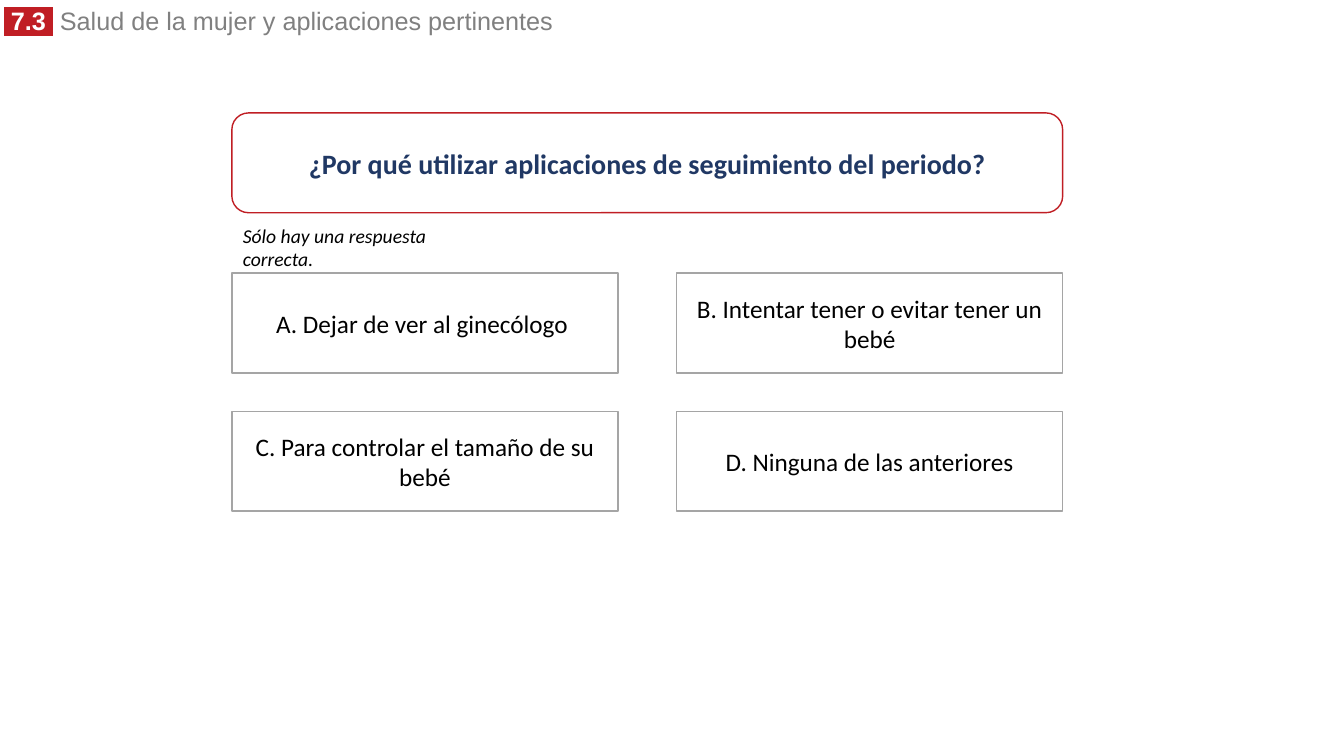
from lxml.etree import SubElement
from pptx import Presentation
from pptx.dml.color import RGBColor
from pptx.enum.shapes import MSO_SHAPE
from pptx.enum.text import MSO_ANCHOR, MSO_AUTO_SIZE, PP_ALIGN
from pptx.oxml.ns import qn
from pptx.util import Inches, Pt

# Content
SECTION_NUMBER = " 7.3 "
SECTION_TITLE = " Salud de la mujer y aplicaciones pertinentes"
QUESTION = "¿Por qué utilizar aplicaciones de seguimiento del periodo?"
HINT = "Sólo hay una respuesta correcta."
ANSWERS = [
    "A. Dejar de ver al ginecólogo ",
    "B. Intentar tener o evitar tener un bebé",
    "C. Para controlar el tamaño de su bebé",
    "D. Ninguna de las anteriores",
]

# Colours and layout in inches
RED, NAVY, GREY, BORDER = "C01E24", "203864", "808080", "A5A5A5"
WHITE, BLACK = "FFFFFF", "000000"
LEFT, QUESTION_TOP, ANSWERS_TOP = 2.3, 1.12, 2.71
QUESTION_WIDTH, ANSWER_WIDTH, BOX_HEIGHT = 8.24, 3.83, 0.99
COLUMN_STEP, ROW_STEP = QUESTION_WIDTH - ANSWER_WIDTH, 1.37


def color(hex_value):
    return RGBColor.from_string(hex_value)


def add_run(paragraph, text, size, hex_value, font="Calibri", bold=False, italic=False):
    run = paragraph.add_run()
    run.text = text
    run.font.size = Pt(size)
    run.font.name = font
    run.font.bold = bold
    run.font.italic = italic
    run.font.color.rgb = color(hex_value)
    return run


def highlight(run, hex_value):
    properties = run.font._element
    mark = SubElement(properties, qn("a:highlight"))
    SubElement(mark, qn("a:srgbClr")).set("val", hex_value)
    properties.find(qn("a:solidFill")).addnext(mark)


def add_label(slide, left, top, width, height):
    frame = slide.shapes.add_textbox(
        Inches(left), Inches(top), Inches(width), Inches(height)).text_frame
    frame.word_wrap = True
    frame.auto_size = MSO_AUTO_SIZE.SHAPE_TO_FIT_TEXT
    return frame.paragraphs[0]


def add_box(slide, kind, left, top, width, border):
    shape = slide.shapes.add_shape(
        kind, Inches(left), Inches(top), Inches(width), Inches(BOX_HEIGHT))
    shape.shadow.inherit = False
    shape.fill.solid()
    shape.fill.fore_color.rgb = color(WHITE)
    shape.line.color.rgb = color(border)
    shape.line.width = Pt(1)
    frame = shape.text_frame
    frame.word_wrap = True
    frame.vertical_anchor = MSO_ANCHOR.MIDDLE
    paragraph = frame.paragraphs[0]
    paragraph.alignment = PP_ALIGN.CENTER
    return paragraph


def main():
    presentation = Presentation()
    presentation.slide_width = Inches(13.33)
    presentation.slide_height = Inches(7.5)
    slide = presentation.slides.add_slide(presentation.slide_layouts[6])

    # Section heading
    heading = add_label(slide, -0.06, 0.06, 6.53, 0.34)
    heading.line_spacing = 0.8
    number = add_run(heading, SECTION_NUMBER, 18, WHITE, "Arial", bold=True)
    highlight(number, RED)
    add_run(heading, SECTION_TITLE, 18, GREY, "Arial")

    # Question and hint
    question = add_box(slide, MSO_SHAPE.ROUNDED_RECTANGLE,
                       LEFT, QUESTION_TOP, QUESTION_WIDTH, RED)
    add_run(question, QUESTION, 20, NAVY, bold=True)
    hint = add_label(slide, LEFT + 0.01, 2.17, 2.36, 0.34)
    add_run(hint, HINT, 14, BLACK, italic=True)

    # Answers in two columns
    for index, text in enumerate(ANSWERS):
        row, column = divmod(index, 2)
        answer = add_box(slide, MSO_SHAPE.RECTANGLE, LEFT + column * COLUMN_STEP,
                         ANSWERS_TOP + row * ROW_STEP, ANSWER_WIDTH, BORDER)
        add_run(answer, text, 18, BLACK)

    presentation.save("out.pptx")


if __name__ == "__main__":
    main()
